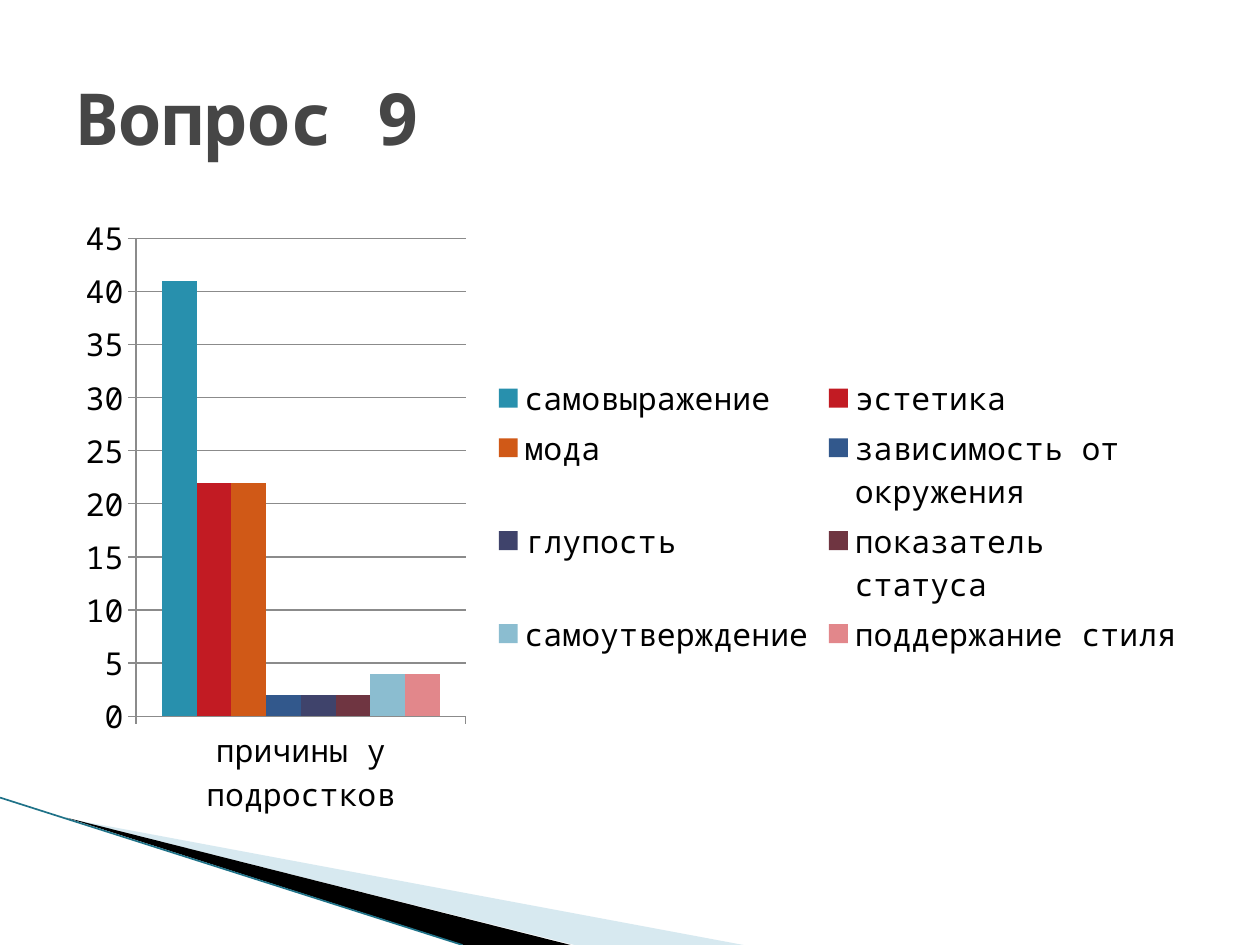
from dataclasses import dataclass

from lxml import etree
from pptx import Presentation, util as u
from pptx.chart import data as chart_data
from pptx.dml import color
from pptx.enum import chart as chart_enum, shapes, text
from pptx.oxml import ns

FONT = "Noto Sans Mono"
COLORS = {
    "pale": "A0CBDC",
    "black": "000000",
    "edge": "1F7288",
    "title": "464646",
    "grid": "8B8B8B",
}


@dataclass(frozen=True)
class Wedge:
    points: tuple[tuple[float, float], ...]
    fill: str
    opacity: int


@dataclass(frozen=True)
class Reason:
    name: str
    votes: int
    fill: str


WEDGES = [
    Wedge(((0.55, 6.5), (5.9, 7.5), (4.56, 7.5)), COLORS["pale"], 42),
    Wedge(((0.53, 6.49), (4.53, 7.5), (3.68, 7.5)), COLORS["black"], 100),
]
REASONS = [
    Reason("самовыражение", 41, "2890AD"),
    Reason("эстетика", 22, "C21B23"),
    Reason("мода", 22, "D05917"),
    Reason("зависимость от окружения", 2, "32588C"),
    Reason("глупость", 2, "3F436B"),
    Reason("показатель статуса", 2, "6F3541"),
    Reason("самоутверждение", 4, "8BBDD0"),
    Reason("поддержание стиля", 4, "E2878B"),
]


def rgb(value: str) -> color.RGBColor:
    return color.RGBColor.from_string(value)


def draw_wedge(page, wedge: Wedge) -> None:
    start, *rest = [(u.Inches(x), u.Inches(y)) for x, y in wedge.points]
    builder = page.shapes.build_freeform(*start)
    builder.add_line_segments(rest, close=True)
    shape = builder.convert_to_shape()
    shape.shadow.inherit = False
    shape.line.fill.background()
    shape.fill.solid()
    shape.fill.fore_color.rgb = rgb(wedge.fill)
    if wedge.opacity < 100:
        tint = shape.element.spPr.find(".//" + ns.qn("a:srgbClr"))
        etree.SubElement(tint, ns.qn("a:alpha"), val=str(wedge.opacity * 1000))


def draw_edge(page) -> None:
    ends = [u.Inches(value) for value in (0, 6.33, 3.67, 7.5)]
    edge = page.shapes.add_connector(shapes.MSO_CONNECTOR.STRAIGHT, *ends)
    edge.line.color.rgb = rgb(COLORS["edge"])
    edge.line.width = u.Pt(0.95)
    etree.SubElement(edge.element.spPr, ns.qn("a:effectLst"))


def draw_chart(page, reasons: list[Reason]) -> None:
    data = chart_data.CategoryChartData()
    data.categories = ["причины у подростков"]
    for reason in reasons:
        data.add_series(reason.name, [reason.votes])
    chart = page.shapes.add_chart(
        chart_enum.XL_CHART_TYPE.COLUMN_CLUSTERED,
        u.Inches(0.5), u.Inches(1.62), u.Inches(9), u.Inches(4.95), data,
    ).chart
    chart.has_title = False
    chart.font.name = FONT
    chart.font.size = u.Pt(18)
    chart.font.color.rgb = rgb(COLORS["black"])

    plot = chart.plots[0]
    plot.vary_by_categories = False
    plot.gap_width = 150
    plot.overlap = 0
    for series, reason in zip(plot.series, reasons):
        series.format.fill.solid()
        series.format.fill.fore_color.rgb = rgb(reason.fill)

    votes = chart.value_axis
    votes.minimum_scale, votes.maximum_scale, votes.major_unit = 0, 45, 5
    votes.has_major_gridlines = True
    for line in (votes.format.line, chart.category_axis.format.line,
                 votes.major_gridlines.format.line):
        line.color.rgb = rgb(COLORS["grid"])
        line.width = u.Pt(0.75)

    chart.has_legend = True
    chart.legend.position = chart_enum.XL_LEGEND_POSITION.RIGHT
    chart.legend.include_in_layout = False


def write_title(page, words: str) -> None:
    box = page.shapes.title
    box.left, box.top = u.Inches(0.5), u.Inches(0.3)
    box.width, box.height = u.Inches(9), u.Inches(1.25)
    box.text_frame.vertical_anchor = text.MSO_ANCHOR.MIDDLE
    para = box.text_frame.paragraphs[0]
    para.alignment = text.PP_ALIGN.LEFT
    span = para.add_run()
    span.text = words
    span.font.name = FONT
    span.font.size = u.Pt(41)
    span.font.bold = True
    span.font.color.rgb = rgb(COLORS["title"])


def main() -> None:
    deck = Presentation()
    deck.slide_width, deck.slide_height = u.Inches(10), u.Inches(7.5)
    page = deck.slides.add_slide(deck.slide_layouts.get_by_name("Title Only"))
    for wedge in WEDGES:
        draw_wedge(page, wedge)
    draw_edge(page)
    draw_chart(page, REASONS)
    write_title(page, "Вопрос 9")
    deck.save("out.pptx")


if __name__ == "__main__":
    main()
